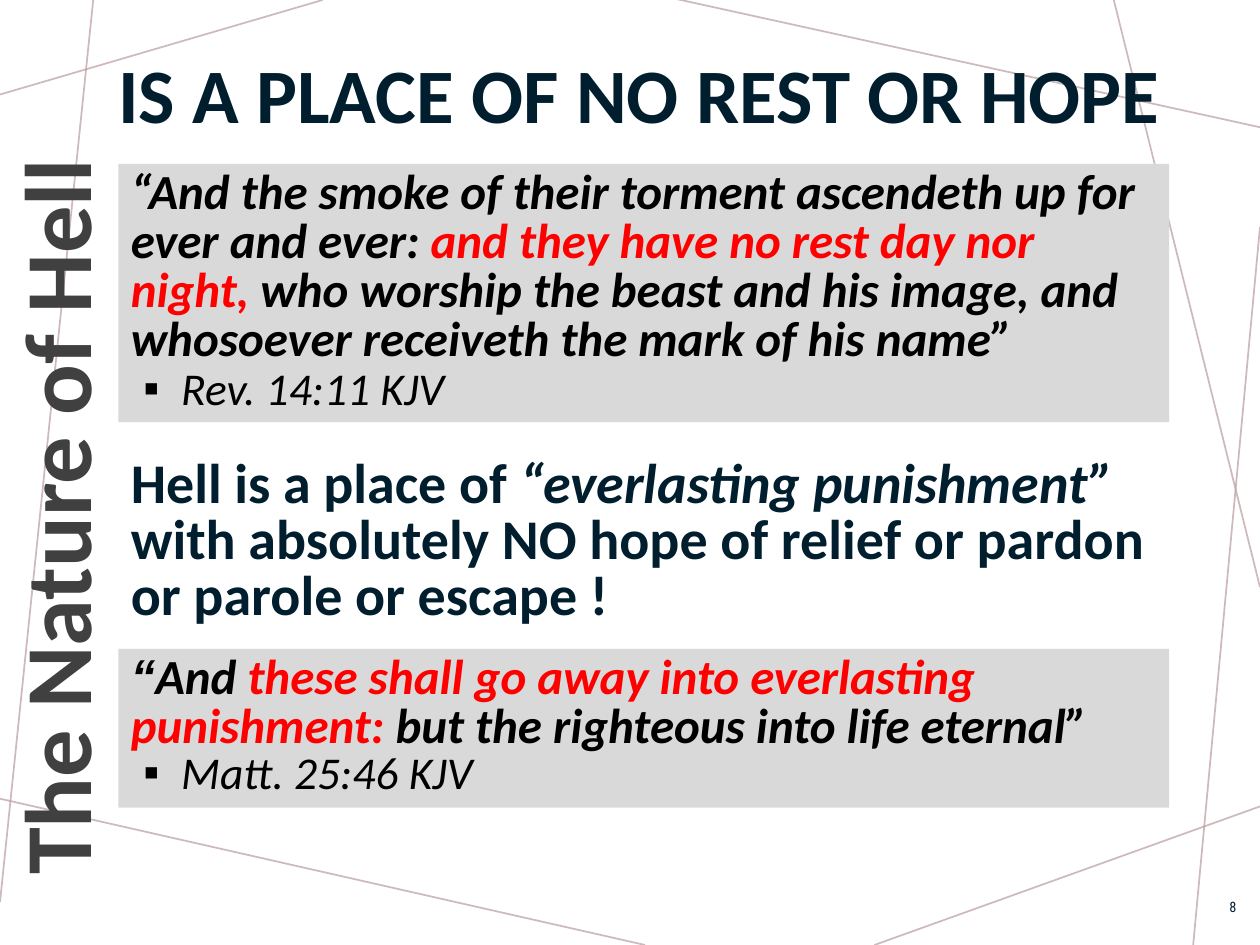
from lxml import etree
from pptx import Presentation
from pptx.dml.color import RGBColor as Rgb
from pptx.enum.shapes import MSO_CONNECTOR as Conn, MSO_SHAPE as Kind
from pptx.enum.text import MSO_ANCHOR as Anchor, MSO_AUTO_SIZE as Auto, PP_ALIGN as Align
from pptx.oxml.ns import qn
from pptx.util import Inches, Pt

# The slide is a grid of 100 columns by 75 rows.
COLS, ROWS = 100, 75
CELL = Inches(10) // COLS
LEFT, WIDE = 9.4, 83.4

NAVY, BLACK, RED, GRAY = "001E2E", "000000", "FF0000", "D9D9D9"
DARK, ROSE = "404040", "BA9CA0"

RAYS = [
    (25.6, 0, 0, 7.5), (7.4, 0, 0, 71.6), (51.2, 75, -0.4, 63.3),
    (100, 64, 69.4, 75), (100, 18, 94.7, 75), (100, 46.6, 88.4, 0),
    (100, 10.1, 53.6, -0.1),
]
VERSE = {"size": Pt(28), "bold": True, "italic": True, "color": BLACK}
HOT = VERSE | {"color": RED}
CITE = VERSE | {"size": Pt(26), "bold": False}
CLAIM = {"size": Pt(32), "bold": True, "color": NAVY}


def grid(*cells):
    return [round(n * CELL) for n in cells]


def tint(target, code):
    target.rgb = Rgb.from_string(code)


def put(item, form):
    for key, val in form.items():
        setattr(item, key, val)


def ray(slide, ends):
    line = slide.shapes.add_connector(Conn.STRAIGHT, *grid(*ends))
    line.line.width = Pt(1)
    tint(line.line.color, ROSE)
    hue = line.line._get_or_add_ln().find(".//" + qn("a:srgbClr"))
    etree.SubElement(hue, qn("a:alpha"), val="70000")
    etree.SubElement(line._element.spPr, qn("a:effectLst"))


def write(para, runs, **form):
    """Add (text, font values) runs, then set the paragraph's own values."""
    for text, font in runs:
        run = para.add_run()
        run.text = text
        look = {"name": "Calibri"} | font
        tint(run.font.color, look.pop("color"))
        put(run.font, look)
    put(para, form)


def dot(para):
    props = para._p.get_or_add_pPr()
    props.set("marL", str(Inches(0.4)))
    props.set("indent", str(-Inches(0.3)))
    etree.SubElement(props, qn("a:buFont"), typeface="Arial")
    etree.SubElement(props, qn("a:buChar"), char="▪")


def label(slide, area, runs, frame=None, **form):
    box = slide.shapes.add_textbox(*grid(*area))
    put(box.text_frame, {"word_wrap": True} | (frame or {}))
    write(box.text_frame.paragraphs[0], runs, **form)
    return box


def quote(slide, top, tall, runs, cite, gap):
    """Draw a gray panel with a verse and its bulleted reference."""
    box = slide.shapes.add_shape(Kind.RECTANGLE, *grid(LEFT, top, WIDE, tall))
    box.shadow.inherit = False
    box.fill.solid()
    tint(box.fill.fore_color, GRAY)
    box.line.fill.background()
    frame = box.text_frame
    put(frame, {"word_wrap": True, "vertical_anchor": Anchor.TOP,
                "auto_size": Auto.SHAPE_TO_FIT_TEXT})
    write(frame.paragraphs[0], runs, alignment=Align.LEFT, line_spacing=Pt(28))
    last = frame.add_paragraph()
    dot(last)
    write(last, [(cite, CITE)], alignment=Align.LEFT, line_spacing=Pt(gap))


def main():
    deck = Presentation()
    put(deck, {"slide_width": COLS * CELL, "slide_height": ROWS * CELL})
    slide = deck.slides.add_slide(deck.slide_layouts[6])
    for ends in RAYS:
        ray(slide, ends)

    label(slide, (8.4, 3.4, 91.6, 8.2),
          [("IS A PLACE OF NO REST OR HOPE", CLAIM | {"size": Pt(44)})],
          {"vertical_anchor": Anchor.BOTTOM}, line_spacing=0.9)
    label(slide, (LEFT, 35.9, 87.1, 14.6), [
        ("Hell is a place of ", CLAIM),
        ("“everlasting punishment” ", CLAIM | {"italic": True}),
        ("with absolutely NO hope of relief or pardon or parole or escape !", CLAIM),
    ], line_spacing=Pt(32))
    side = label(slide, (-26.2, 36, 61, 10.1),
                 [("The Nature of Hell", {"size": Pt(54), "bold": True, "color": DARK})],
                 {"word_wrap": False, "auto_size": Auto.SHAPE_TO_FIT_TEXT},
                 alignment=Align.CENTER)
    side.rotation = 270

    quote(slide, 13, 20.5, [
        ("“And the smoke of their torment ascendeth up for ever and ever: ", VERSE),
        ("and they have no rest day nor night, ", HOT),
        ("who worship the beast and his image, and whosoever receiveth "
         "the mark of his name”", VERSE),
    ], "Rev. 14:11 KJV", 28)
    quote(slide, 51.5, 12.6, [
        ("“", VERSE | {"name": "Arial"}),
        ("And ", VERSE),
        ("these shall go away into everlasting punishment:", HOT),
        (" but the righteous into life eternal”", VERSE),
    ], "Matt. 25:46 KJV", 26)

    label(slide, (95.2, 70, 3.9, 4),
          [("8", {"name": "Roboto Condensed", "size": Pt(8.2), "color": NAVY})],
          {"vertical_anchor": Anchor.MIDDLE}, alignment=Align.RIGHT)
    deck.save("out.pptx")


if __name__ == "__main__":
    main()
